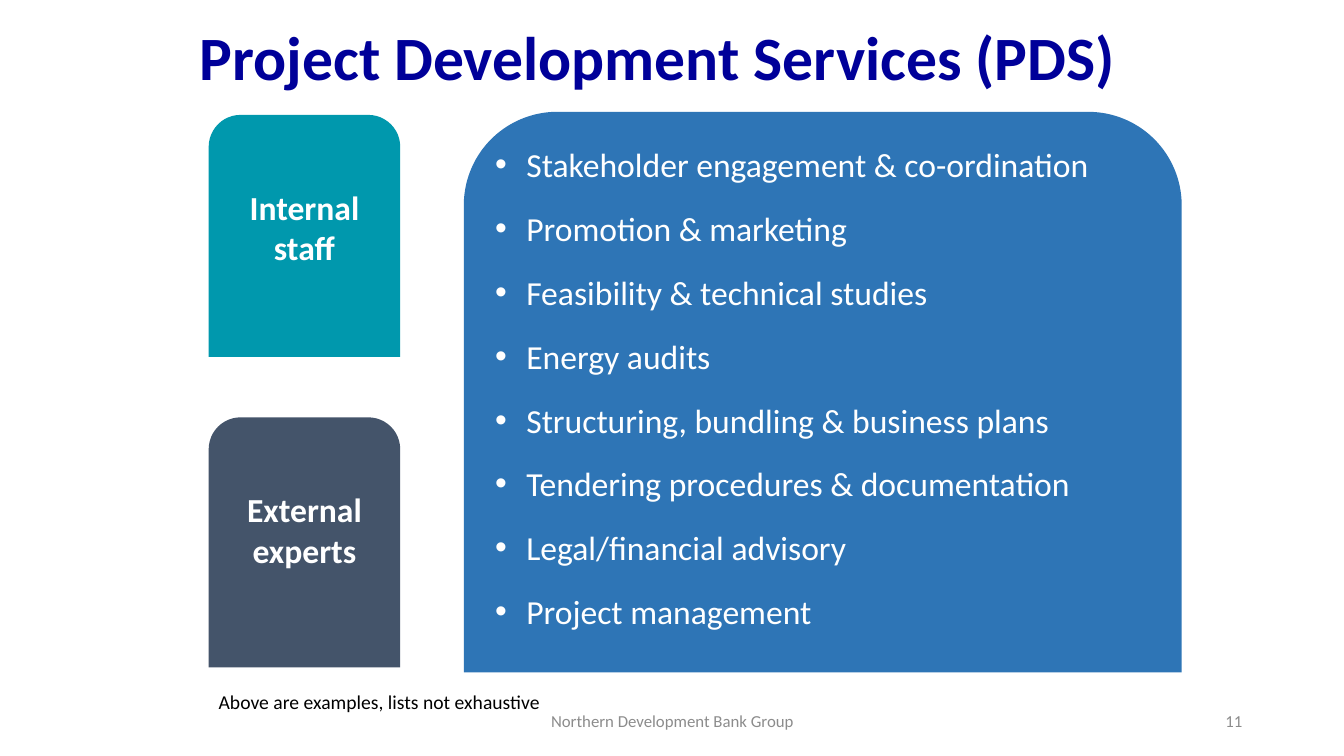
from pptx import Presentation
from pptx.dml.color import RGBColor
from pptx.enum.shapes import MSO_SHAPE
from pptx.enum.text import MSO_ANCHOR, MSO_AUTO_SIZE, PP_ALIGN
from pptx.util import Pt

PX = 9144
ROUND_TOP = MSO_SHAPE.ROUND_2_SAME_RECTANGLE
TOP, MIDDLE = MSO_ANCHOR.TOP, MSO_ANCHOR.MIDDLE
LEFT, CENTER, RIGHT = PP_ALIGN.LEFT, PP_ALIGN.CENTER, PP_ALIGN.RIGHT
NO_AUTOFIT = MSO_AUTO_SIZE.NONE


def color(value):
    return RGBColor.from_string(value)


def write(holder, lines, size, ink, align=LEFT, anchor=TOP, bold=False, insets=(10, 5)):
    frame = holder.text_frame
    frame.text = "\n".join(lines)
    frame.word_wrap = True
    frame.auto_size = NO_AUTOFIT
    frame.vertical_anchor = anchor
    frame.margin_left = frame.margin_right = insets[0] * PX
    frame.margin_top = insets[1] * PX
    frame.margin_bottom = 5 * PX
    for paragraph in frame.paragraphs:
        paragraph.alignment = align
        paragraph.font.name = "Calibri"
        paragraph.font.size = Pt(size)
        paragraph.font.bold = bold
        paragraph.font.color.rgb = color(ink)
    return frame.paragraphs


prs = Presentation()
prs.slide_width, prs.slide_height = 1333 * PX, 750 * PX
slide = prs.slides.add_slide(prs.slide_layouts[1])
title, services = slide.placeholders

title.left, title.top, title.width, title.height = 188 * PX, 30 * PX, 998 * PX, 60 * PX
heading = write(title, ["Project Development Services (PDS)"], 44, "000099", anchor=MIDDLE, bold=True)
heading[0].line_spacing = 0.9

panels = [
    (207, 114, 190, 240, "0098AD", "Internal staff"),
    (207, 414, 190, 248, "44546A", "External experts"),
    (460, 111, 712, 556, "2E75B6", None),
]
for left, top, width, height, fill, label in panels:
    panel = slide.shapes.add_shape(ROUND_TOP, left * PX, top * PX, width * PX, height * PX)
    panel.shadow.inherit = False
    panel.fill.solid()
    panel.fill.fore_color.rgb = color(fill)
    panel.line.fill.background()
    if label:
        write(panel, [label], 24, "FFFFFF", CENTER, bold=True, insets=(4, 62))

services.left, services.top, services.width, services.height = 487 * PX, 138 * PX, 658 * PX, 529 * PX
slide.shapes._spTree.append(services._element)
service_lines = write(services, [
    "Stakeholder engagement & co-ordination",
    "Promotion & marketing",
    "Feasibility & technical studies",
    "Energy audits",
    "Structuring, bundling & business plans",
    "Tendering procedures & documentation",
    "Legal/financial advisory",
    "Project management",
], 24, "FFFFFF", insets=(4, 5))
for line in service_lines:
    line.space_after = Pt(12)
    properties = line._p.get_or_add_pPr()
    properties.set("marL", str(31 * PX))
    properties.set("indent", str(-31 * PX))

notes = [
    (207, 680, 532, 34, "Above are examples, lists not exhaustive", 14, "000000", LEFT, TOP),
    (442, 695, 450, 40, "Northern Development Bank Group", 12, "8C8C8C", CENTER, MIDDLE),
    (942, 695, 300, 40, "11", 12, "8C8C8C", RIGHT, MIDDLE),
]
for left, top, width, height, wording, size, ink, align, anchor in notes:
    note = slide.shapes.add_textbox(left * PX, top * PX, width * PX, height * PX)
    write(note, [wording], size, ink, align, anchor)

prs.save("out.pptx")
